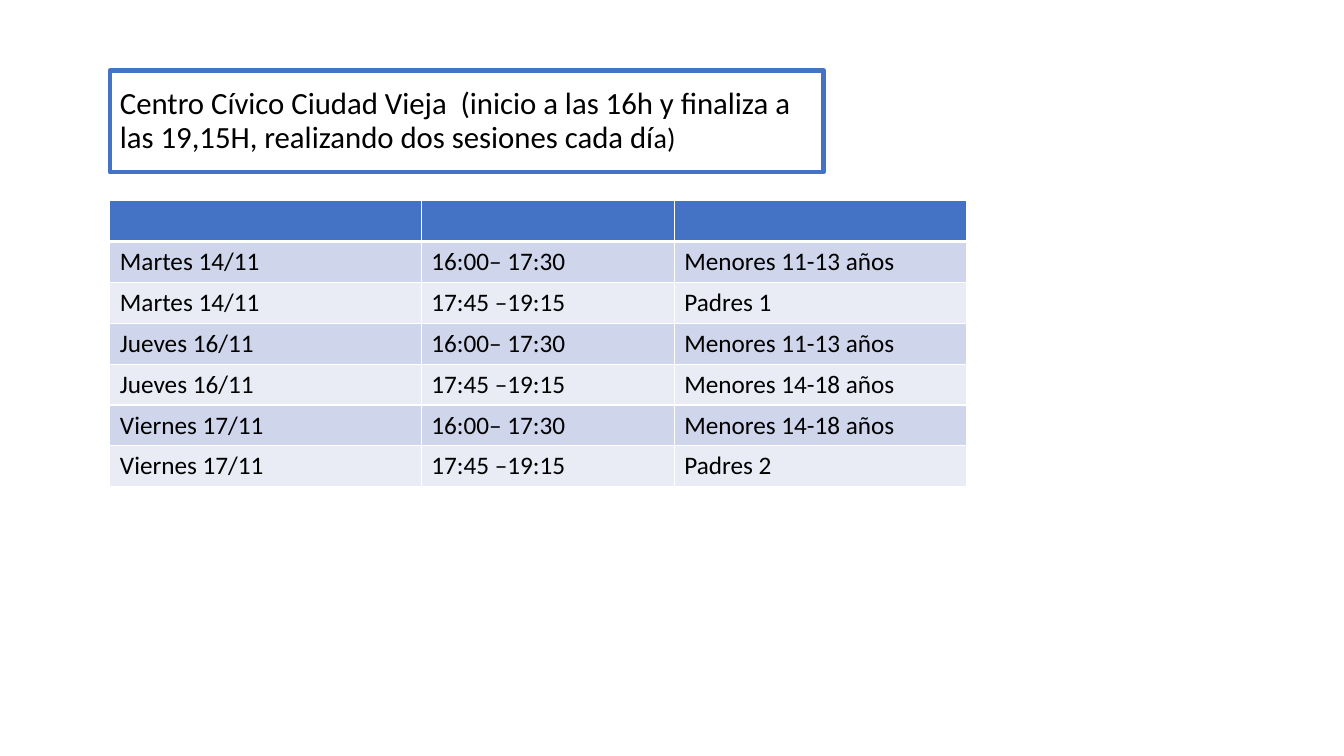
from lxml import etree
from pptx import Presentation
from pptx.dml.color import RGBColor
from pptx.enum.text import MSO_ANCHOR, MSO_AUTO_SIZE, PP_ALIGN
from pptx.oxml.ns import qn
from pptx.util import Pt

MIDDLE = MSO_ANCHOR.MIDDLE
NO_FIT = MSO_AUTO_SIZE.NONE
LEFT = PP_ALIGN.LEFT
TITLE_ONLY = 5

COLORS = {
    "white": "FFFFFF",
    "black": "000000",
    "blue": "4472C4",
    "band_dark": "CFD5EA",
    "band_light": "E9EBF5",
}

TITLE_RUNS = [
    ("Centro Cívico Ciudad Vieja  (inicio a las 16h y finaliza a las 19,15H, "
     "realizando dos sesiones cada dí", 22),
    ("a)", 20),
]
EARLY, LATE = "16:00– 17:30", "17:45 –19:15"
SESSIONS = [
    ("", "", ""),
    ("Martes 14/11", EARLY, "Menores 11-13 años"),
    ("Martes 14/11", LATE, "Padres 1"),
    ("Jueves 16/11", EARLY, "Menores 11-13 años"),
    ("Jueves 16/11", LATE, "Menores 14-18 años"),
    ("Viernes 17/11", EARLY, "Menores 14-18 años"),
    ("Viernes 17/11", LATE, "Padres 2"),
]


class SlideBuilder:
    font = "Calibri"

    def __init__(self, slide):
        self.s = slide

    def color(self, name):
        return RGBColor.from_string(COLORS[name])

    def style_font(self, font, size):
        font.name = self.font
        font.size = Pt(size)
        font.color.rgb = self.color("black")

    def title(self, x, y, w, h, runs):
        sp = self.s.shapes.title
        sp.left, sp.top, sp.width, sp.height = Pt(x), Pt(y), Pt(w), Pt(h)
        sp.fill.solid()
        sp.fill.fore_color.rgb = self.color("white")
        sp.line.color.rgb = self.color("blue")
        sp.line.width = Pt(3)
        tf = sp.text_frame
        tf.word_wrap = True
        tf.auto_size = NO_FIT
        tf.vertical_anchor = MIDDLE
        p = tf.paragraphs[0]
        p.alignment = LEFT
        p.line_spacing = 0.9
        for text, size in runs:
            r = p.add_run()
            r.text = text
            self.style_font(r.font, size)

    def borders(self, cell, bottom):
        tc_pr = cell._tc.get_or_add_tcPr()
        for side, width in (("L", 1), ("R", 1), ("T", 1), ("B", bottom)):
            ln = etree.SubElement(tc_pr, qn(f"a:ln{side}"), w=str(Pt(width)))
            fill = etree.SubElement(ln, qn("a:solidFill"))
            etree.SubElement(fill, qn("a:srgbClr"), val=COLORS["white"])

    def table(self, x, y, widths, row_height, rows):
        table = self.s.shapes.add_table(
            len(rows), len(widths), Pt(x), Pt(y),
            Pt(sum(widths)), Pt(row_height * len(rows))).table
        table.horz_banding = False
        table.first_row = True
        for column, width in zip(table.columns, widths):
            column.width = Pt(width)
        for i, values in enumerate(rows):
            table.rows[i].height = Pt(row_height)
            header = i == 0
            band = "blue" if header else ("band_light", "band_dark")[i % 2]
            for j, value in enumerate(values):
                cell = table.cell(i, j)
                # The header rule is thick on both sides of the shared edge
                self.borders(cell, bottom=3 if header else 1)
                cell.fill.solid()
                cell.fill.fore_color.rgb = self.color(band)
                cell.text_frame.text = value
                p = cell.text_frame.paragraphs[0]
                for r in p.runs:
                    self.style_font(r.font, 18)
                    r.font.bold = False


def main():
    prs = Presentation()
    prs.slide_width, prs.slide_height = Pt(960), Pt(540)
    b = SlideBuilder(prs.slides.add_slide(prs.slide_layouts[TITLE_ONLY]))

    # Framed title
    b.title(78.5, 50.4, 509.8, 72.7, TITLE_RUNS)

    # Session timetable
    b.table(78.5, 143.3, (222.5, 180.7, 208.8), 29.2, SESSIONS)

    prs.save("out.pptx")


if __name__ == "__main__":
    main()
